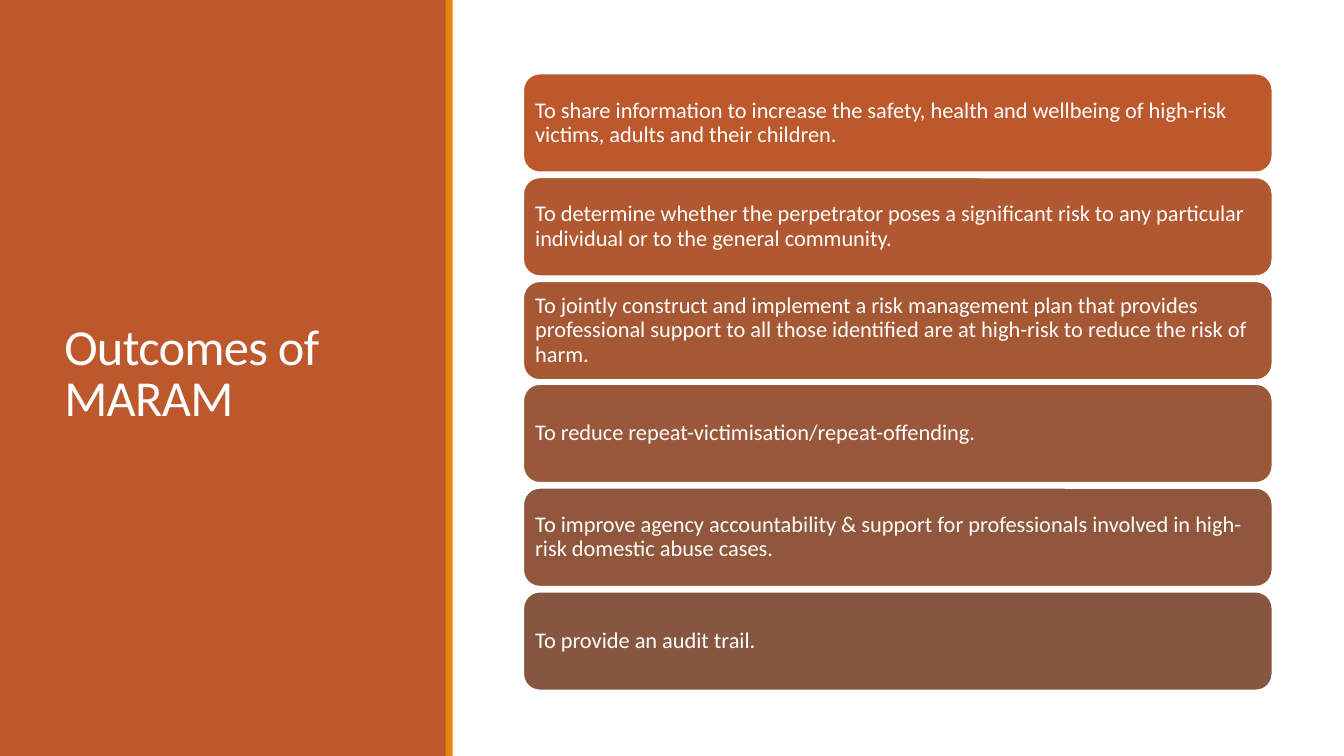
from pptx import Presentation
from pptx.dml.color import RGBColor
from pptx.enum.shapes import MSO_SHAPE
from pptx.enum.text import MSO_ANCHOR, PP_ALIGN
from pptx.util import Pt

RECTANGLE = MSO_SHAPE.RECTANGLE
ROUNDED = MSO_SHAPE.ROUNDED_RECTANGLE
MIDDLE = MSO_ANCHOR.MIDDLE
LEFT = PP_ALIGN.LEFT

PX = 9144
THEME = {
    "font": "Calibri",
    "title_size": Pt(36),
    "outcome_size": Pt(16),
    "white": RGBColor.from_string("FFFFFF"),
    "panel": RGBColor.from_string("BD582C"),
    "stripe": RGBColor.from_string("E48312"),
}
OUTCOMES = [
    ("BD582C", "To share information to increase the safety, health and wellbeing of high-risk victims, adults and their children."),
    ("B15831", "To determine whether the perpetrator poses a significant risk to any particular individual or to the general community."),
    ("A65835", "To jointly construct and implement a risk management plan that provides professional support to all those identified are at high-risk to reduce the risk of harm."),
    ("9B5739", "To reduce repeat-victimisation/repeat-offending."),
    ("90573D", "To improve agency accountability & support for professionals involved in high-risk domestic abuse cases."),
    ("865640", "To provide an audit trail."),
]
STACK_TOP, STACK_BOTTOM, CARD_HEIGHT = 73, 685, 98


def add_block(kind, left, top, width, height, color):
    block = slide.shapes.add_shape(kind, left * PX, top * PX, width * PX, height * PX)
    block.shadow.inherit = False
    block.fill.solid()
    block.fill.fore_color.rgb = color
    block.line.fill.background()
    return block


def write_text(frame, text, size, line_spacing):
    frame.word_wrap = True
    frame.vertical_anchor = MIDDLE
    paragraph = frame.paragraphs[0]
    paragraph.text = text
    paragraph.alignment = LEFT
    paragraph.line_spacing = line_spacing
    paragraph.font.name = THEME["font"]
    paragraph.font.size = size
    paragraph.font.color.rgb = THEME["white"]
    return paragraph


prs = Presentation()
prs.slide_width = 1333 * PX
prs.slide_height = 750 * PX
slide = prs.slides.add_slide(prs.slide_layouts[6])

add_block(RECTANGLE, 0, 0, 443, 750, THEME["panel"])
add_block(RECTANGLE, 442, 0, 7, 750, THEME["stripe"])

title = slide.shapes.add_textbox(54 * PX, 57 * PX, 337 * PX, 631 * PX)
heading = write_text(title.text_frame, "Outcomes of MARAM", THEME["title_size"], 0.85)
heading.runs[0].font._element.set("spc", "-50")

pitch = (STACK_BOTTOM - STACK_TOP - CARD_HEIGHT) / (len(OUTCOMES) - 1)
for index, (color, outcome) in enumerate(OUTCOMES):
    card_top = round(STACK_TOP + index * pitch)
    card = add_block(ROUNDED, 519, card_top, 743, CARD_HEIGHT, RGBColor.from_string(color))
    card.line.color.rgb = THEME["white"]
    card.line.width = Pt(1.25)
    frame = card.text_frame
    frame.margin_left = frame.margin_right = 7 * PX
    frame.margin_top = frame.margin_bottom = 7 * PX
    write_text(frame, outcome, THEME["outcome_size"], 0.9)

prs.save("out.pptx")
